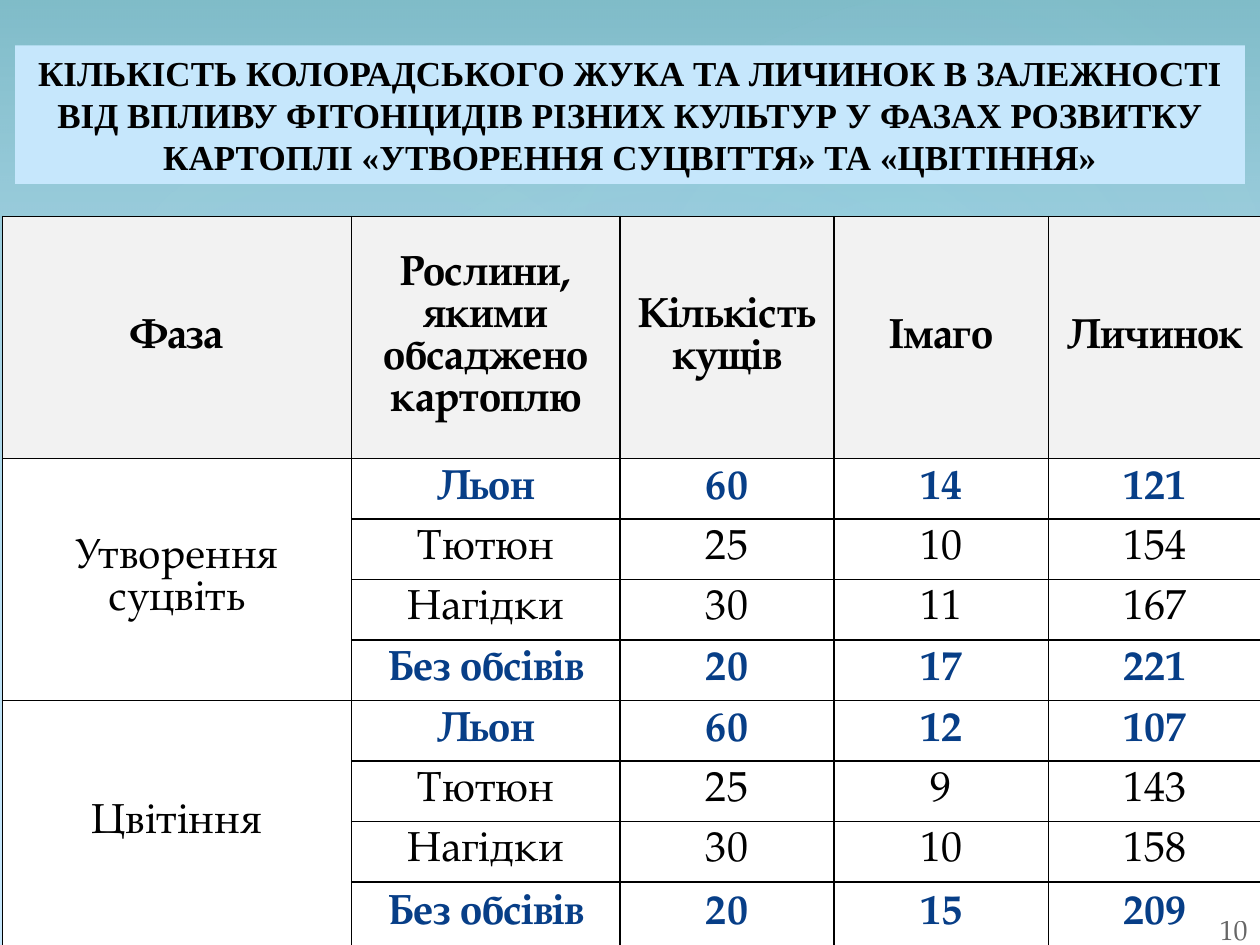
"""Build a slide with a table of beetle and larva counts on potato plots."""
from dataclasses import dataclass
from typing import Any

from lxml.etree import SubElement as Sub, Element as Node
from pptx import Presentation as Deck
from pptx.dml.color import RGBColor as Color
from pptx.enum.shapes import MSO_SHAPE as Shape
from pptx.enum.text import MSO_ANCHOR as Anchor, PP_ALIGN as Align
from pptx.oxml.ns import qn
from pptx.util import Pt

BLACK = Color(0x00, 0x00, 0x00)
WHITE = Color(0xFF, 0xFF, 0xFF)
GREY = Color(0xF2, 0xF2, 0xF2)
BLUE = Color(0x07, 0x3E, 0x87)
SKY = Color(0xC6, 0xE7, 0xFC)
TEAL = Color(0x03, 0x70, 0x6E)
AQUA = Color(0x5A, 0xFB, 0xF8)
SERIF = "Times New Roman"
BOOK = "TeX Gyre Pagella"
PAD = {"margin_left": Pt(0.72), "margin_right": Pt(0.72),
       "margin_top": Pt(0.72), "margin_bottom": Pt(0),
       "vertical_anchor": Anchor.MIDDLE}
TITLE = ("КІЛЬКІСТЬ КОЛОРАДСЬКОГО ЖУКА ТА ЛИЧИНОК В ЗАЛЕЖНОСТІ ВІД ВПЛИВУ "
         "ФІТОНЦИДІВ РІЗНИХ КУЛЬТУР У ФАЗАХ РОЗВИТКУ КАРТОПЛІ "
         "«УТВОРЕННЯ СУЦВІТТЯ» ТА «ЦВІТІННЯ»")
HEADS = ("Фаза", "Рослини, якими обсаджено картоплю", "Кількість кущів",
         "Імаго", "Личинок")
WIDTHS = (199.44, 153.36, 122.4, 122.4, 122.4)
HEIGHTS = (138.24, *[34.56] * 7, 36.72)


@dataclass(frozen=True)
class Box:
    left: float
    top: float
    width: float
    height: float

    def place(self) -> tuple:
        return Pt(self.left), Pt(self.top), Pt(self.width), Pt(self.height)


@dataclass(frozen=True)
class Stop:
    pos: int
    color: Color
    alpha: int


@dataclass(frozen=True)
class Glow:
    box: Box
    turn: float
    alpha: int


@dataclass(frozen=True)
class Plant:
    name: str
    count: int
    bold: bool


@dataclass(frozen=True)
class Phase:
    name: str
    adults: tuple
    larvae: tuple


GLOWS = (Glow(Box(108, 82.08, 570.24, 449.28), 328.7, 7),
         Glow(Box(-21.6, 92.16, 436.32, 352.8), 294.3, 8),
         Glow(Box(257.76, 9.36, 510.48, 374.4), 328.7, 8))
PLANTS = (Plant("Льон", 60, True), Plant("Тютюн", 25, False),
          Plant("Нагідки", 30, False), Plant("Без обсівів", 20, True))
STAGES = (Phase("Утворення суцвіть", (14, 10, 11, 17), (121, 154, 167, 221)),
          Phase("Цвітіння", (12, 9, 10, 15), (107, 143, 158, 209)))


def apply(target: Any, values: dict) -> None:
    for name, value in values.items():
        setattr(target, name, value)


def write(frame: Any, text: str, font: dict, align: Align = Align.CENTER) -> Any:
    para = frame.paragraphs[0]
    apply(para, {"alignment": align, "line_spacing": Pt(24)})
    run = para.add_run()
    run.text = text
    color = font.get("color", BLACK)
    apply(run.font, {k: v for k, v in font.items() if k != "color"})
    run.font.color.rgb = color
    return run


def shade(shape: Any, stops: tuple, round_fill: bool) -> None:
    grad = Node(qn("a:gradFill"), rotWithShape="1")
    group = Sub(grad, qn("a:gsLst"))
    for stop in stops:
        mark = Sub(group, qn("a:gs"), pos=str(stop.pos * 1000))
        tint = Sub(mark, qn("a:srgbClr"), val=str(stop.color))
        Sub(tint, qn("a:alpha"), val=str(stop.alpha * 1000))
    if round_fill:
        route = Sub(grad, qn("a:path"), path="circle")
        Sub(route, qn("a:fillToRect"), l="50000", t="50000", r="50000", b="50000")
    else:
        Sub(grad, qn("a:lin"), ang="5400000", scaled="0")
    shape._element.spPr.find(qn("a:prstGeom")).addnext(grad)


def wash(slide: Any, kind: Shape, box: Box, stops: tuple, turn: float = 0) -> None:
    shape = slide.shapes.add_shape(kind, *box.place())
    shape.shadow.inherit = False
    shape.line.fill.background()
    shape.rotation = turn
    shade(shape, stops, kind == Shape.OVAL)


def label(slide: Any, box: Box, text: str, font: dict, frame: dict,
          align: Align = Align.CENTER) -> tuple:
    shape = slide.shapes.add_textbox(*box.place())
    apply(shape.text_frame, {"word_wrap": True, "vertical_anchor": Anchor.BOTTOM,
                             **frame})
    return shape, write(shape.text_frame, text, font, align)


def edge(cell: Any) -> None:
    props = cell._tc.get_or_add_tcPr()
    for spot, side in enumerate("LRTB"):
        line = Node(qn(f"a:ln{side}"), w=str(Pt(1)))
        Sub(Sub(line, qn("a:solidFill")), qn("a:srgbClr"), val=str(BLACK))
        props.insert(spot, line)


def fill_cell(cell: Any, text: str, bold: bool, color: Color = BLACK) -> None:
    write(cell.text_frame, text,
          {"size": Pt(24), "name": BOOK, "bold": bold, "color": color})


def draw_grid(slide: Any) -> None:
    box = Box(1.44, 123.84, sum(WIDTHS), sum(HEIGHTS))
    grid = slide.shapes.add_table(len(HEIGHTS), len(WIDTHS), *box.place()).table
    apply(grid, {"first_row": False, "horz_banding": False})
    for part, width in zip(grid.columns, WIDTHS):
        part.width = Pt(width)
    for row, (part, height) in enumerate(zip(grid.rows, HEIGHTS)):
        part.height = Pt(height)
        for cell in part.cells:
            apply(cell, PAD)
            cell.fill.solid()
            cell.fill.fore_color.rgb = WHITE if row else GREY
            edge(cell)
    for col, head in enumerate(HEADS):
        fill_cell(grid.cell(0, col), head, True)
    size = len(PLANTS)
    for step, phase in enumerate(STAGES):
        first = 1 + step * size
        grid.cell(first, 0).merge(grid.cell(first + size - 1, 0))
        fill_cell(grid.cell(first, 0), phase.name, False)
        lines = zip(PLANTS, phase.adults, phase.larvae)
        for row, (plant, adults, larvae) in enumerate(lines, first):
            color = BLUE if plant.bold else BLACK
            for col, value in enumerate((plant.name, plant.count, adults, larvae), 1):
                fill_cell(grid.cell(row, col), str(value), plant.bold, color)


def main() -> None:
    deck = Deck()
    apply(deck, {"slide_width": Pt(720), "slide_height": Pt(540)})
    slide = deck.slides.add_slide(deck.slide_layouts[6])
    slide.background.fill.solid()
    slide.background.fill.fore_color.rgb = SKY
    wash(slide, Shape.RECTANGLE, Box(0, 0, 720, 540),
         (Stop(0, TEAL, 36), Stop(100, SKY, 10)))
    for glow in GLOWS:
        wash(slide, Shape.OVAL, glow.box,
             (Stop(0, AQUA, glow.alpha), Stop(58, SKY, 0)), glow.turn)
    title, _ = label(slide, Box(8.64, 25.92, 702.72, 79.2), TITLE,
                     {"size": Pt(20), "name": SERIF, "bold": True}, {})
    title.fill.solid()
    title.fill.fore_color.rgb = SKY
    draw_grid(slide)
    _, run = label(slide, Box(552.24, 517.68, 167.76, 23.76), "10",
                   {"size": Pt(16), "name": BOOK}, {"margin_bottom": Pt(0.72)},
                   Align.RIGHT)
    tint = run._r.find(".//" + qn("a:srgbClr"))
    Sub(tint, qn("a:alpha"), val="60000")
    deck.save("out.pptx")


if __name__ == "__main__":
    main()
